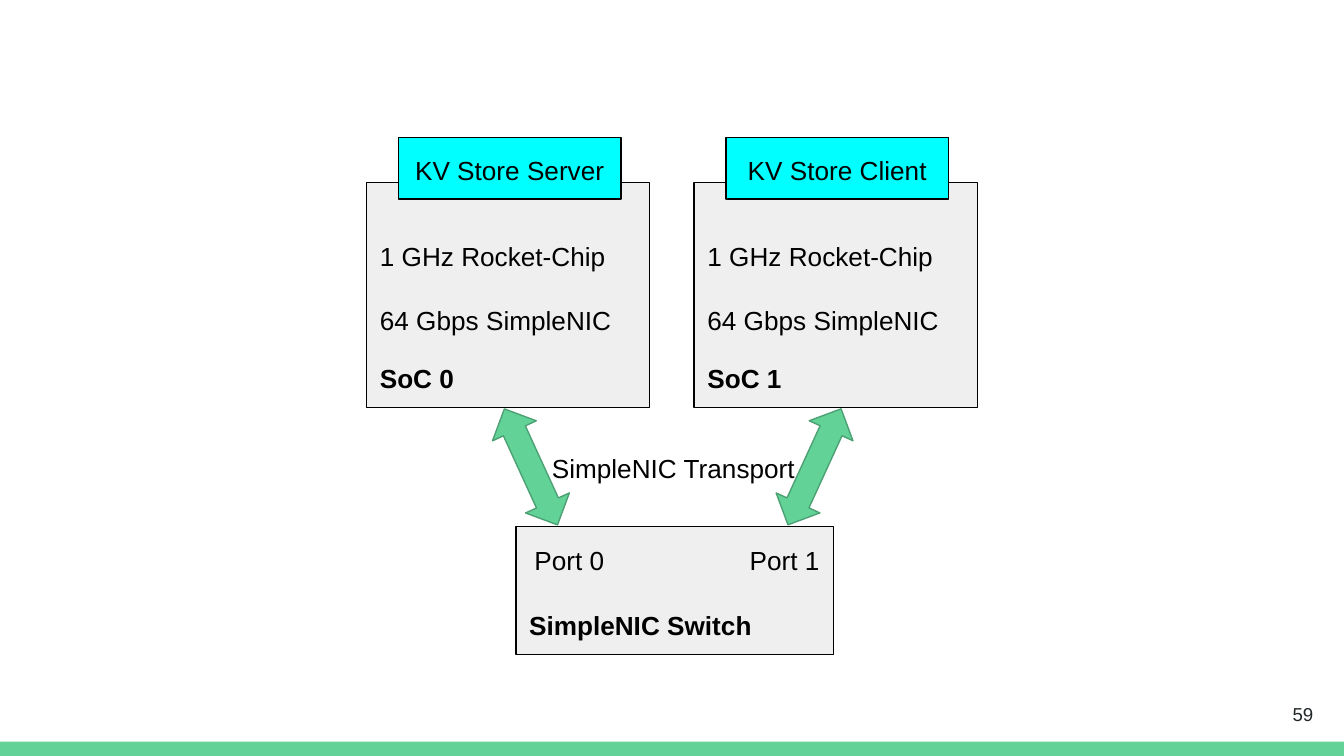
from dataclasses import dataclass

from lxml import etree
from pptx import Presentation
from pptx.dml.color import RGBColor
from pptx.enum.shapes import MSO_SHAPE
from pptx.enum.text import MSO_ANCHOR, PP_ALIGN
from pptx.oxml.ns import qn
from pptx.util import Cm, Pt

RECT, ARROW = MSO_SHAPE.RECTANGLE, MSO_SHAPE.UP_DOWN_ARROW
TOP, MIDDLE, BOTTOM = MSO_ANCHOR.TOP, MSO_ANCHOR.MIDDLE, MSO_ANCHOR.BOTTOM
LEFT, CENTER, RIGHT = PP_ALIGN.LEFT, PP_ALIGN.CENTER, PP_ALIGN.RIGHT


@dataclass(frozen=True)
class Theme:
    font: str = "Arial"
    body: float = 14
    small: float = 10
    gap: float = 17.6
    line: float = 0.75
    ink: str = "000000"
    number: str = "202729"
    panel: str = "EFEFEF"
    app: str = "00FFFF"
    green: str = "63D297"
    dark_green: str = "4BA173"


THEME = Theme()


def rgb(value):
    return RGBColor.from_string(value)


def add_box(s, kind, x, y, w, h, fill, line=None):
    sp = s.shapes.add_shape(kind, Cm(x), Cm(y), Cm(w), Cm(h))
    sp.shadow.inherit = False
    sp.fill.solid()
    sp.fill.fore_color.rgb = rgb(fill)
    if line:
        sp.line.color.rgb = rgb(line)
        sp.line.width = Pt(THEME.line)
    else:
        sp.line.fill.background()
    return sp


def write(sp, lines, align=LEFT, anchor=TOP, bold=False,
          size=THEME.body, color=THEME.ink, tab=None):
    tf = sp.text_frame
    tf.word_wrap = True
    tf.vertical_anchor = anchor
    tf.margin_left = tf.margin_right = Cm(0.25)
    tf.margin_top = tf.margin_bottom = Cm(0.25)
    for i, line in enumerate(lines):
        p = tf.add_paragraph() if i else tf.paragraphs[0]
        p.alignment = align
        if i:
            p.space_before = Pt(THEME.gap)
        if tab:
            tabs = etree.SubElement(p._p.get_or_add_pPr(), qn("a:tabLst"))
            etree.SubElement(tabs, qn("a:tab"), pos=str(Cm(tab)), algn="l")
        r = p.add_run()
        r.text = line
        r.font.name = THEME.font
        r.font.size = Pt(size)
        r.font.bold = bold
        r.font.color.rgb = rgb(color)


def add_text(s, x, y, w, h, lines, **style):
    write(s.shapes.add_textbox(Cm(x), Cm(y), Cm(w), Cm(h)), lines, **style)


def add_soc(s, x, y, w, h, name, app):
    sp = add_box(s, RECT, x, y, w, h, THEME.panel, THEME.ink)
    write(sp, [name], anchor=BOTTOM, bold=True)
    sp = add_box(s, RECT, x + 0.6, y - 0.85, w - 1.14, 1.16, THEME.app, THEME.ink)
    write(sp, [app], align=CENTER, anchor=BOTTOM)
    add_text(s, x, y + 0.84, w, 1.45, ["1 GHz Rocket-Chip", "64 Gbps SimpleNIC"])


def add_switch(s, x, y, w, h):
    sp = add_box(s, RECT, x, y, w, h, THEME.panel, THEME.ink)
    write(sp, ["SimpleNIC Switch"], anchor=BOTTOM, bold=True)
    add_text(s, x + 0.1, y + 0.1, w, 1.16, ["Port 0\tPort 1"], tab=4.07)


def add_transport(s, x, y, w, h):
    arrow_w = 0.91
    for left, angle in ((x, -24.6), (x + w - arrow_w, 24.6)):
        sp = add_box(s, ARROW, left, y, arrow_w, h, THEME.green, THEME.dark_green)
        sp.rotation = angle
    add_text(s, x + 0.6, y + 0.69, w - 0.93, 1.45, ["SimpleNIC Transport"])


def add_footer(s, x, y, w, h, number):
    add_box(s, RECT, x, y, w, h, THEME.green)
    add_text(s, x + w - 1.85, y - 1.07, 1.52, 1.09, [number], align=RIGHT,
             anchor=MIDDLE, size=THEME.small, color=THEME.number)


def main():
    prs = Presentation()
    prs.slide_width, prs.slide_height = Cm(25.4), Cm(14.29)
    s = prs.slides.add_slide(prs.slide_layouts[6])
    add_footer(s, 0, 14.02, 25.4, 0.27, "59")
    for i, app in enumerate(("KV Store Server", "KV Store Client")):
        add_soc(s, 6.93 + i * 6.19, 3.45, 5.35, 4.25, f"SoC {i}", app)
    add_switch(s, 9.75, 9.95, 6, 2.42)
    add_transport(s, 9.58, 7.62, 6.27, 2.41)
    prs.save("out.pptx")


if __name__ == "__main__":
    main()
